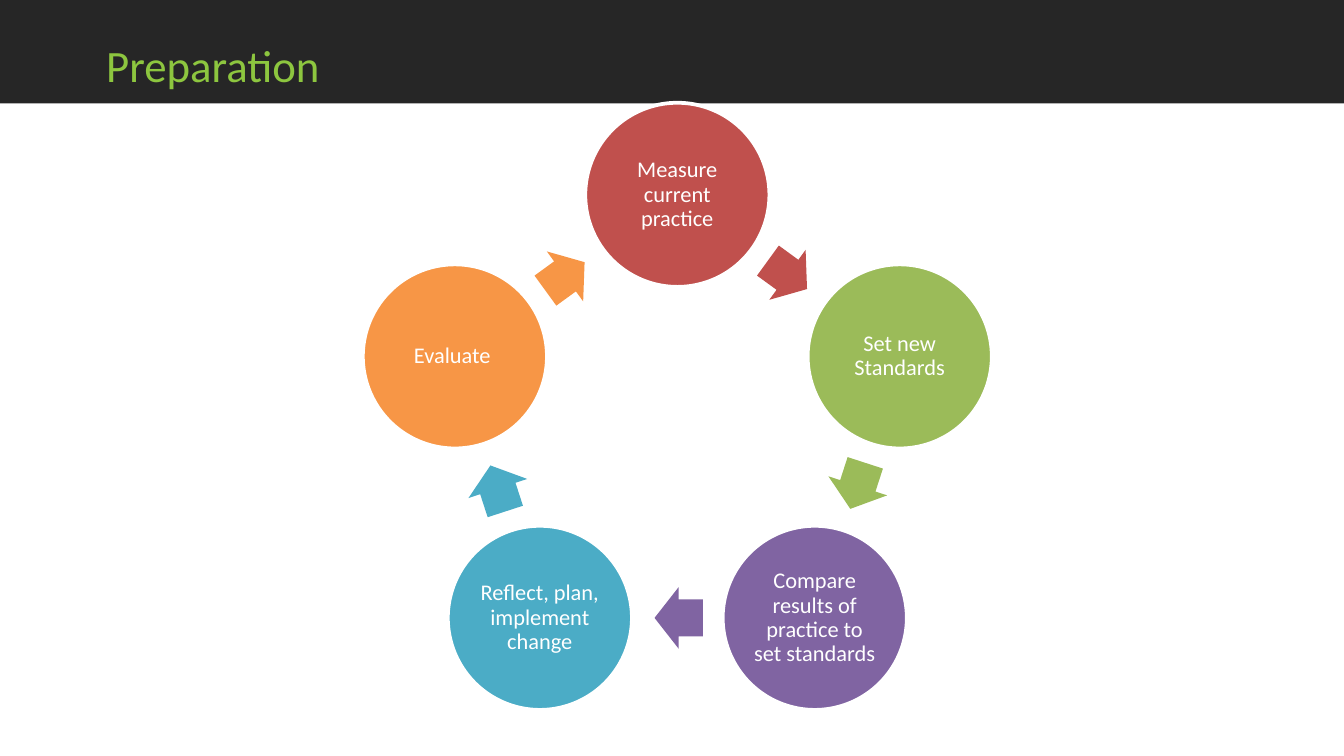
from math import cos, radians, sin

from pptx import Presentation
from pptx.dml.color import RGBColor
from pptx.enum.shapes import MSO_SHAPE
from pptx.enum.text import MSO_ANCHOR, PP_ALIGN
from pptx.util import Inches, Pt

WIDTH = 10
HEIGHT = WIDTH * 9 / 16
CENTER_X, CENTER_Y = 5.04, 3.19
RING_RADIUS = 1.74
CIRCLE_SIZE = 1.37
ARROW_LENGTH, ARROW_WIDTH = 0.36, 0.46
ARROW_SETBACK = 0.01
FONT = "Calibri"

COLORS = {
    "header": "262626",
    "title": "8DC63F",
    "white": "FFFFFF",
    "red": "C0504D",
    "green": "9BBB59",
    "purple": "8064A2",
    "blue": "4BACC6",
    "orange": "F79646",
}

STEPS = [
    ("Measure current practice", "red"),
    ("Set new Standards", "green"),
    ("Compare results of practice to set standards ", "purple"),
    ("Reflect, plan, implement change", "blue"),
    ("Evaluate ", "orange"),
]


def color(name):
    return RGBColor.from_string(COLORS[name])


def format_text(paragraph, size, color_name, alignment):
    paragraph.alignment = alignment
    for run in paragraph.runs:
        run.font.name = FONT
        run.font.size = Pt(size)
        run.font.color.rgb = color(color_name)


def add_filled_shape(slide, kind, center, size, color_name):
    left, top = (middle - length / 2 for middle, length in zip(center, size))
    shape = slide.shapes.add_shape(
        kind, Inches(left), Inches(top), Inches(size[0]), Inches(size[1])
    )
    shape.shadow.inherit = False
    shape.fill.solid()
    shape.fill.fore_color.rgb = color(color_name)
    shape.line.fill.background()
    return shape


def add_header(slide):
    bar = add_filled_shape(
        slide, MSO_SHAPE.RECTANGLE, (WIDTH / 2 + 0.01, 0.38), (10.04, 0.78), "header"
    )
    title = slide.shapes.title
    title._element.addprevious(bar._element)
    title.left, title.top = Inches(0.69), Inches(0.27)
    title.width, title.height = Inches(8.71), Inches(0.42)
    title.text_frame.text = "Preparation"
    title.text_frame.vertical_anchor = MSO_ANCHOR.MIDDLE
    format_text(title.text_frame.paragraphs[0], 24, "title", PP_ALIGN.LEFT)


def add_step(slide, center, text, color_name):
    circle = add_filled_shape(
        slide, MSO_SHAPE.OVAL, center, (CIRCLE_SIZE, CIRCLE_SIZE), color_name
    )
    circle.line.color.rgb = color("white")
    circle.line.width = Pt(2)
    frame = circle.text_frame
    frame.word_wrap = True
    frame.vertical_anchor = MSO_ANCHOR.MIDDLE
    frame.margin_left = frame.margin_right = Inches(0.02)
    frame.margin_top = frame.margin_bottom = Inches(0.02)
    frame.text = text
    paragraph = frame.paragraphs[0]
    paragraph.line_spacing = 0.9
    format_text(paragraph, 12, "white", PP_ALIGN.CENTER)


def add_arrow(slide, start, end, rotation, color_name):
    angle = radians(rotation)
    center = (
        (start[0] + end[0]) / 2 - ARROW_SETBACK * cos(angle),
        (start[1] + end[1]) / 2 - ARROW_SETBACK * sin(angle),
    )
    arrow = add_filled_shape(
        slide, MSO_SHAPE.RIGHT_ARROW, center, (ARROW_LENGTH, ARROW_WIDTH), color_name
    )
    arrow.adjustments[0] = 0.6
    arrow.adjustments[1] = 0.5
    arrow.rotation = rotation


def add_cycle(slide):
    turn = 360 / len(STEPS)
    centers = [
        (
            CENTER_X + RING_RADIUS * sin(radians(turn * index)),
            CENTER_Y - RING_RADIUS * cos(radians(turn * index)),
        )
        for index in range(len(STEPS))
    ]
    for index, (text, color_name) in enumerate(STEPS):
        following = centers[(index + 1) % len(STEPS)]
        add_step(slide, centers[index], text, color_name)
        add_arrow(slide, centers[index], following, turn * (index + 0.5), color_name)


def main():
    presentation = Presentation()
    presentation.slide_width = Inches(WIDTH)
    presentation.slide_height = Inches(HEIGHT)
    slide = presentation.slides.add_slide(presentation.slide_layouts[5])
    add_header(slide)
    add_cycle(slide)
    presentation.save("out.pptx")


if __name__ == "__main__":
    main()
